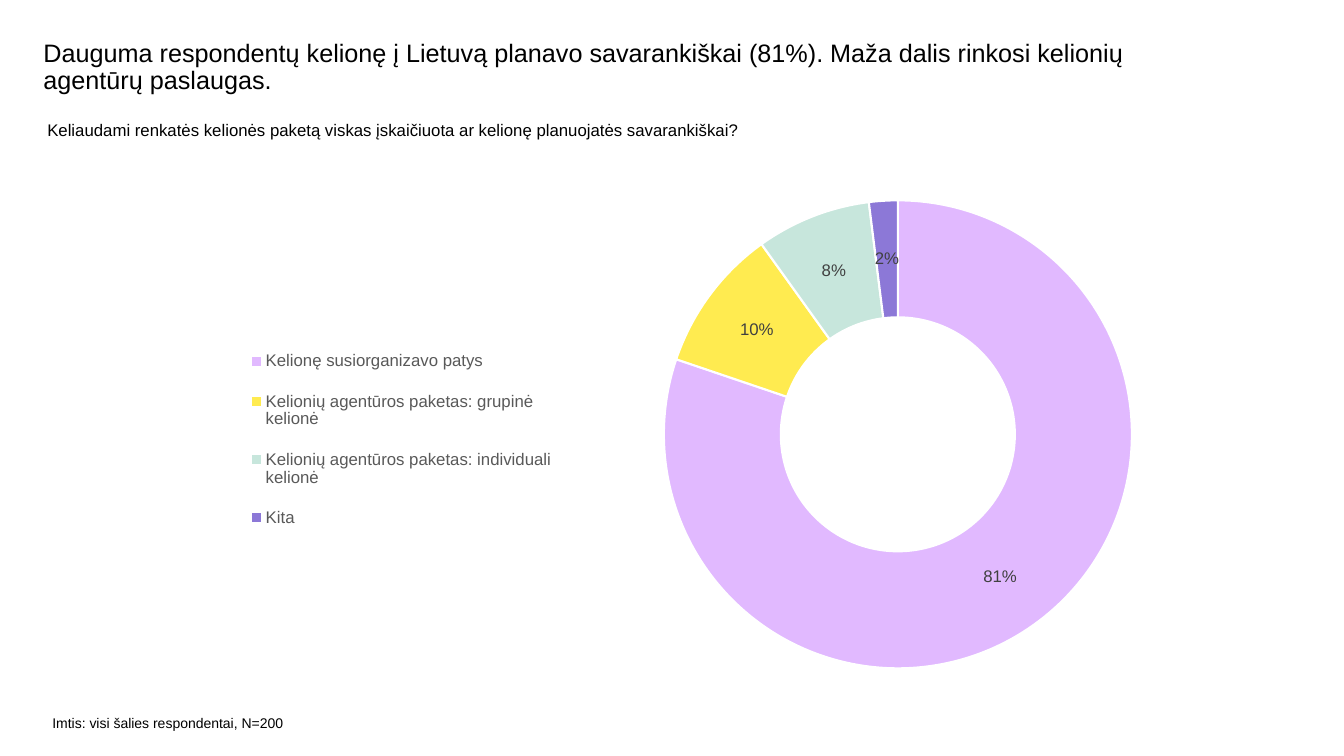
from dataclasses import dataclass

from lxml.etree import SubElement
from pptx import Presentation
from pptx.chart.data import CategoryChartData
from pptx.dml.color import RGBColor
from pptx.enum.chart import XL_CHART_TYPE as ChartType, XL_LEGEND_POSITION as LegendPosition
from pptx.enum.text import MSO_ANCHOR as Anchor, MSO_AUTO_SIZE as AutoSize, PP_ALIGN as Align
from pptx.oxml.ns import qn
from pptx.util import Pt


@dataclass(frozen=True)
class Theme:
    font: str = "Arial"
    text: str = "000000"
    legend: str = "595959"
    label: str = "404040"
    border: str = "FFFFFF"
    title_size: float = 18
    body_size: float = 12
    note_size: float = 10


@dataclass(frozen=True)
class Box:
    left: float
    top: float
    width: float
    height: float


@dataclass(frozen=True)
class Caption:
    text: str
    box: Box
    size: float


@dataclass(frozen=True)
class Slice:
    name: str
    share: float
    color: str


THEME = Theme()
TITLE = Caption(
    "Dauguma respondentų kelionę į Lietuvą planavo savarankiškai (81%). "
    "Maža dalis rinkosi kelionių agentūrų paslaugas.",
    Box(31, 28.8, 810, 43.2), THEME.title_size)
CAPTIONS = [
    Caption("Keliaudami renkatės kelionės paketą viskas įskaičiuota ar kelionę "
            "planuojatės savarankiškai?", Box(33.8, 85.7, 856, 44), THEME.body_size),
    Caption("Imtis: visi šalies respondentai, N=200",
            Box(37.4, 510.5, 182, 17.3), THEME.note_size),
]
SLICES = [
    Slice("Kelionę susiorganizavo patys", 0.81, "E1B9FF"),
    Slice("Kelionių agentūros paketas: grupinė kelionė", 0.10, "FFEB50"),
    Slice("Kelionių agentūros paketas: individuali kelionė", 0.08, "C7E6DC"),
    Slice("Kita", 0.02, "8C78D7"),
]
CHART_BOX = Box(159.8, 128.9, 668.9, 355.7)
# Fractions of the chart area
RING_AREA = Box(0.47, 0.04, 0.5, 0.94)
LEGEND_AREA = Box(0.01, 0.3, 0.36, 0.44)


def style_font(font, size: float, color: str) -> None:
    font.name = THEME.font
    font.size = Pt(size)
    font.bold = False
    font.color.rgb = RGBColor.from_string(color)


def points(box: Box) -> tuple:
    return Pt(box.left), Pt(box.top), Pt(box.width), Pt(box.height)


def write_caption(shape, caption: Caption, line_spacing: float = 1.0) -> None:
    shape.left, shape.top, shape.width, shape.height = points(caption.box)
    frame = shape.text_frame
    frame.margin_left = frame.margin_top = frame.margin_right = frame.margin_bottom = 0
    frame.word_wrap = True
    frame.auto_size = AutoSize.NONE
    frame.vertical_anchor = Anchor.TOP
    frame.text = caption.text
    paragraph = frame.paragraphs[0]
    paragraph.alignment = Align.LEFT
    paragraph.line_spacing = line_spacing
    style_font(paragraph.font, caption.size, THEME.text)


def place_part(parent, index: int, area: Box, inner: bool = False) -> None:
    """Give a chart part a manual layout."""
    for old_layout in parent.findall(qn("c:layout")):
        parent.remove(old_layout)
    layout = SubElement(parent, qn("c:layout"))
    parent.insert(index, layout)
    manual = SubElement(layout, qn("c:manualLayout"))
    settings = [("layoutTarget", "inner")] if inner else []
    settings += [("xMode", "edge"), ("yMode", "edge"), ("x", area.left),
                 ("y", area.top), ("w", area.width), ("h", area.height)]
    for tag, value in settings:
        SubElement(manual, qn(f"c:{tag}")).set("val", str(value))


def add_doughnut(slide) -> None:
    data = CategoryChartData(number_format="0%")
    data.categories = [part.name for part in SLICES]
    data.add_series("Series 1", [part.share for part in SLICES])
    chart = slide.shapes.add_chart(ChartType.DOUGHNUT, *points(CHART_BOX), data).chart
    chart.has_title = False
    style_font(chart.font, THEME.note_size, THEME.text)

    # Ring
    plot = chart.plots[0]
    plot.vary_by_categories = True
    for index, part in enumerate(SLICES):
        form = plot.series[0].points[index].format
        form.fill.solid()
        form.fill.fore_color.rgb = RGBColor.from_string(part.color)
        form.line.color.rgb = RGBColor.from_string(THEME.border)
        form.line.width = Pt(1.5)
    place_part(chart.element.find(f".//{qn('c:plotArea')}"), 0, RING_AREA, inner=True)

    # Value labels
    labels = plot.series[0].data_labels
    labels.show_value = True
    labels.show_percentage = False
    labels.number_format = "0%"
    labels.number_format_is_linked = False
    style_font(labels.font, THEME.body_size, THEME.label)

    # Legend
    chart.has_legend = True
    chart.legend.position = LegendPosition.BOTTOM
    chart.legend.include_in_layout = False
    style_font(chart.legend.font, THEME.body_size, THEME.legend)
    place_part(chart.element.find(f".//{qn('c:legend')}"), 1, LEGEND_AREA)


def main() -> None:
    presentation = Presentation()
    presentation.slide_width, presentation.slide_height = Pt(960), Pt(540)
    slide = presentation.slides.add_slide(presentation.slide_layouts[5])

    # Title, question and sample note
    write_caption(slide.shapes.title, TITLE, line_spacing=0.9)
    for caption in CAPTIONS:
        write_caption(slide.shapes.add_textbox(*points(caption.box)), caption)

    add_doughnut(slide)
    presentation.save("out.pptx")


if __name__ == "__main__":
    main()
